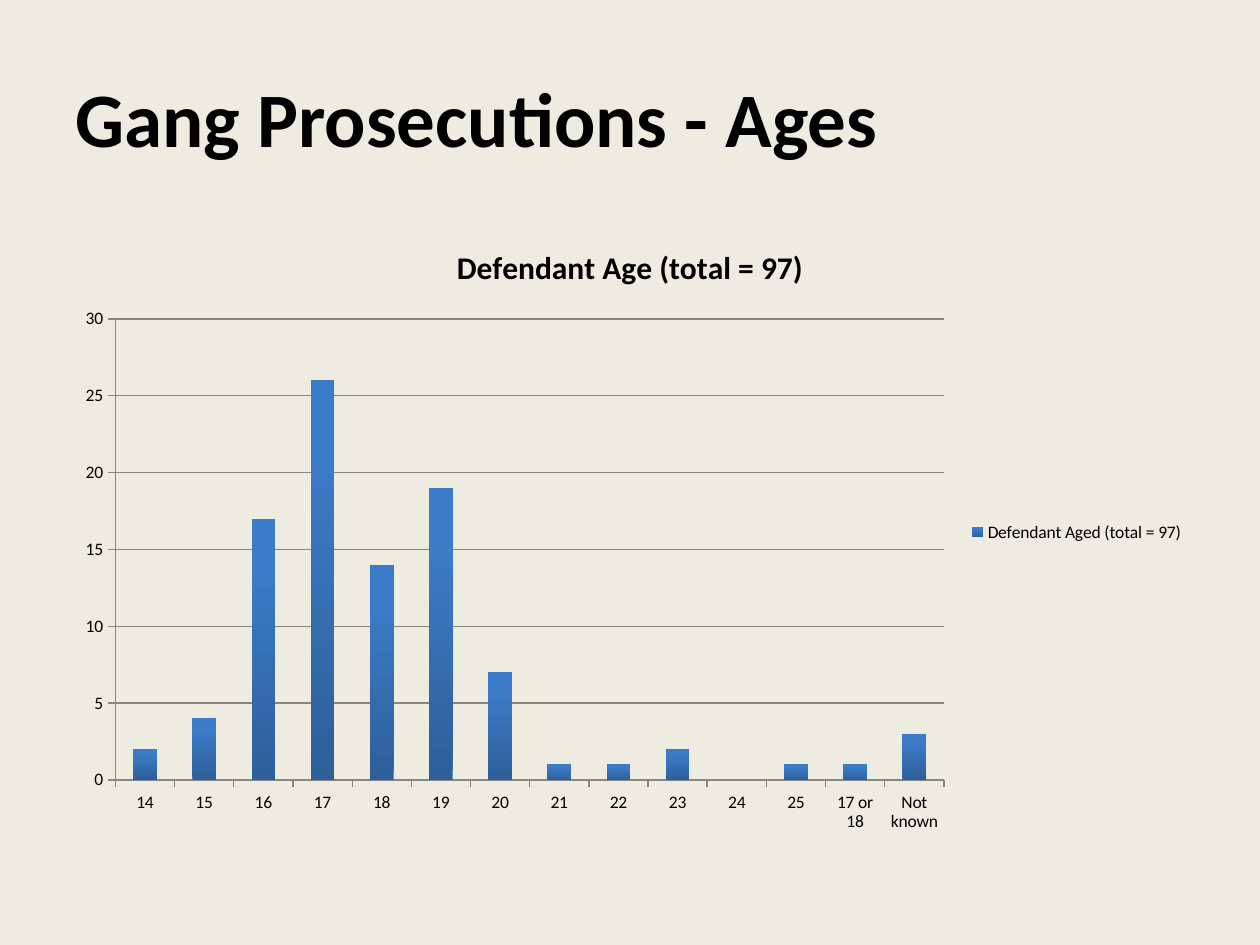
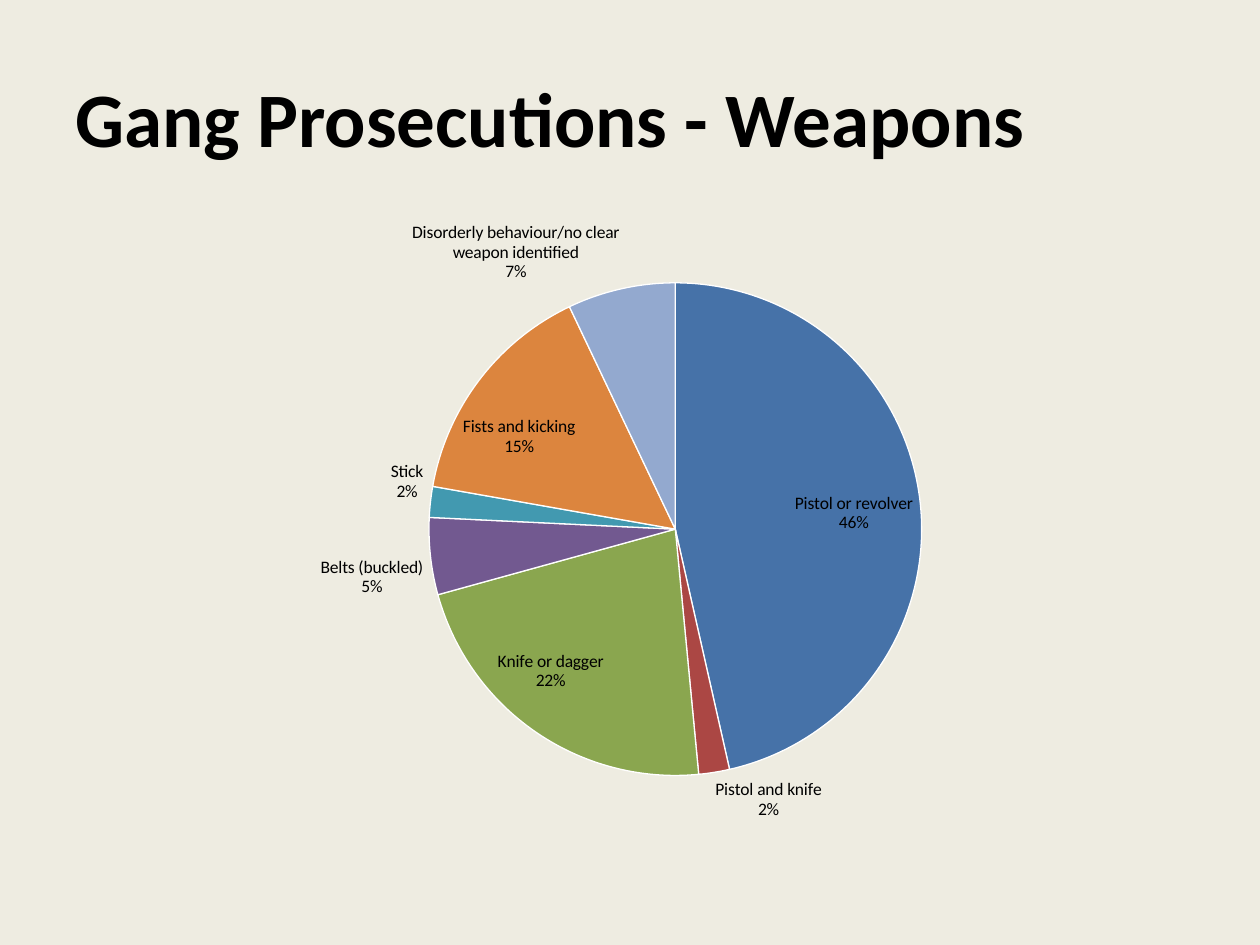
from lxml import etree
from pptx import Presentation
from pptx import util as u
from pptx.chart import data as chart_data
from pptx.dml import color as dml
from pptx.enum import chart as ch
from pptx.enum import text
from pptx.oxml import ns

FONT = "Calibri"
BACKGROUND, BLACK, WHITE, GRID = "EEECE1", "000000", "FFFFFF", "868686"
BAR_BOTTOM, BAR_TOP = "2E5F99", "3C7BC7"


def rgb(value):
    return dml.RGBColor.from_string(value)


def style_font(font, size, bold=False):
    font.name = FONT
    font.size = u.Pt(size)
    font.bold = bold
    font.color.rgb = rgb(BLACK)


presentation = Presentation()
presentation.slide_width = u.Inches(10)
presentation.slide_height = u.Inches(7.5)

ages = {"14": 2, "15": 4, "16": 17, "17": 26, "18": 14, "19": 19, "20": 7,
        "21": 1, "22": 1, "23": 2, "24": 0, "25": 1, "17 or 18": 1,
        "Not known": 3}
weapons = {"Pistol or revolver": 46, "Pistol and knife": 2,
           "Knife or dagger": 22, "Belts (buckled)": 5, "Stick": 2,
           "Fists and kicking": 15,
           "Disorderly behaviour/no clear weapon identified": 7}
weapon_colours = ["4672A8", "AB4744", "8AA64F", "725990", "4299B0", "DC853E",
                  "93A9CF"]

# Each slide: a title above one chart
charts = []
for title, chart_type, series_name, counts in [
    ("Gang Prosecutions - Ages", ch.XL_CHART_TYPE.COLUMN_CLUSTERED,
     "Defendant Aged (total = 97)", ages),
    ("Gang Prosecutions - Weapons", ch.XL_CHART_TYPE.PIE, "Series 1", weapons),
]:
    slide = presentation.slides.add_slide(presentation.slide_layouts[6])
    slide.background.fill.solid()
    slide.background.fill.fore_color.rgb = rgb(BACKGROUND)

    title_box = slide.shapes.add_textbox(
        u.Inches(0.5), u.Inches(0.3), u.Inches(9), u.Inches(1.25))
    title_box.text_frame.word_wrap = True
    title_box.text_frame.vertical_anchor = text.MSO_ANCHOR.MIDDLE
    run = title_box.text_frame.paragraphs[0].add_run()
    run.text = title
    style_font(run.font, 44, bold=True)

    data = chart_data.CategoryChartData()
    data.categories = list(counts)
    data.add_series(series_name, list(counts.values()))
    chart = slide.shapes.add_chart(
        chart_type, u.Inches(0.5), u.Inches(1.75), u.Inches(9),
        u.Inches(4.95), data).chart
    style_font(chart.font, 10)
    charts.append(chart)

age_chart, weapon_chart = charts

# Ages: columns with a vertical gradient
age_chart.has_title = True
run = age_chart.chart_title.text_frame.paragraphs[0].add_run()
run.text = "Defendant Age (total = 97)"
style_font(run.font, 18, bold=True)
age_chart.has_legend = True
age_chart.legend.position = ch.XL_LEGEND_POSITION.RIGHT
age_chart.legend.include_in_layout = False

age_chart.value_axis.minimum_scale = 0
age_chart.value_axis.maximum_scale = 30
age_chart.value_axis.major_unit = 5
age_chart.value_axis.has_major_gridlines = True
for axis in (age_chart.category_axis, age_chart.value_axis):
    axis.major_tick_mark = ch.XL_TICK_MARK.OUTSIDE
    axis.minor_tick_mark = ch.XL_TICK_MARK.NONE
for lines in (age_chart.category_axis, age_chart.value_axis,
              age_chart.value_axis.major_gridlines):
    lines.format.line.color.rgb = rgb(GRID)
    lines.format.line.width = u.Pt(0.75)

age_plot = age_chart.plots[0]
age_plot.vary_by_categories = False
age_plot.gap_width = 150
bar_fill = age_plot.series[0].format.fill
bar_fill.gradient()
bar_fill.gradient_angle = 90
for stop, colour, position in zip(
        bar_fill.gradient_stops, (BAR_BOTTOM, BAR_TOP), (0, 0.8)):
    stop.color.rgb = rgb(colour)
    stop.position = position

# Weapons: pie with category and percentage labels
weapon_chart.has_title = False
weapon_chart.has_legend = False
weapon_chart.plots[0].vary_by_categories = True
weapon_series = weapon_chart.plots[0].series[0]
for index, colour in enumerate(weapon_colours):
    wedge = weapon_series.points[index].format
    wedge.fill.solid()
    wedge.fill.fore_color.rgb = rgb(colour)
    wedge.line.color.rgb = rgb(WHITE)
    wedge.line.width = u.Pt(0.75)

labels = weapon_series.data_labels
labels.show_value = False
labels.show_category_name = True
labels.show_percentage = True
labels.position = ch.XL_LABEL_POSITION.BEST_FIT
style_font(labels.font, 10)
separator = etree.Element(ns.qn("c:separator"))
separator.text = "\n"
labels._element.find(ns.qn("c:showBubbleSize")).addnext(separator)

plot_area = weapon_chart._chartSpace.find(".//" + ns.qn("c:plotArea"))
for old_layout in plot_area.findall(ns.qn("c:layout")):
    plot_area.remove(old_layout)
layout = etree.Element(ns.qn("c:layout"))
plot_area.insert(0, layout)
manual = etree.SubElement(layout, ns.qn("c:manualLayout"))
for tag, value in [("layoutTarget", "inner"), ("xMode", "edge"),
                   ("yMode", "edge"), ("x", "0.3"), ("y", "0.1"),
                   ("w", "0.48"), ("h", "0.79")]:
    etree.SubElement(manual, ns.qn("c:" + tag)).set("val", value)

presentation.save("out.pptx")
